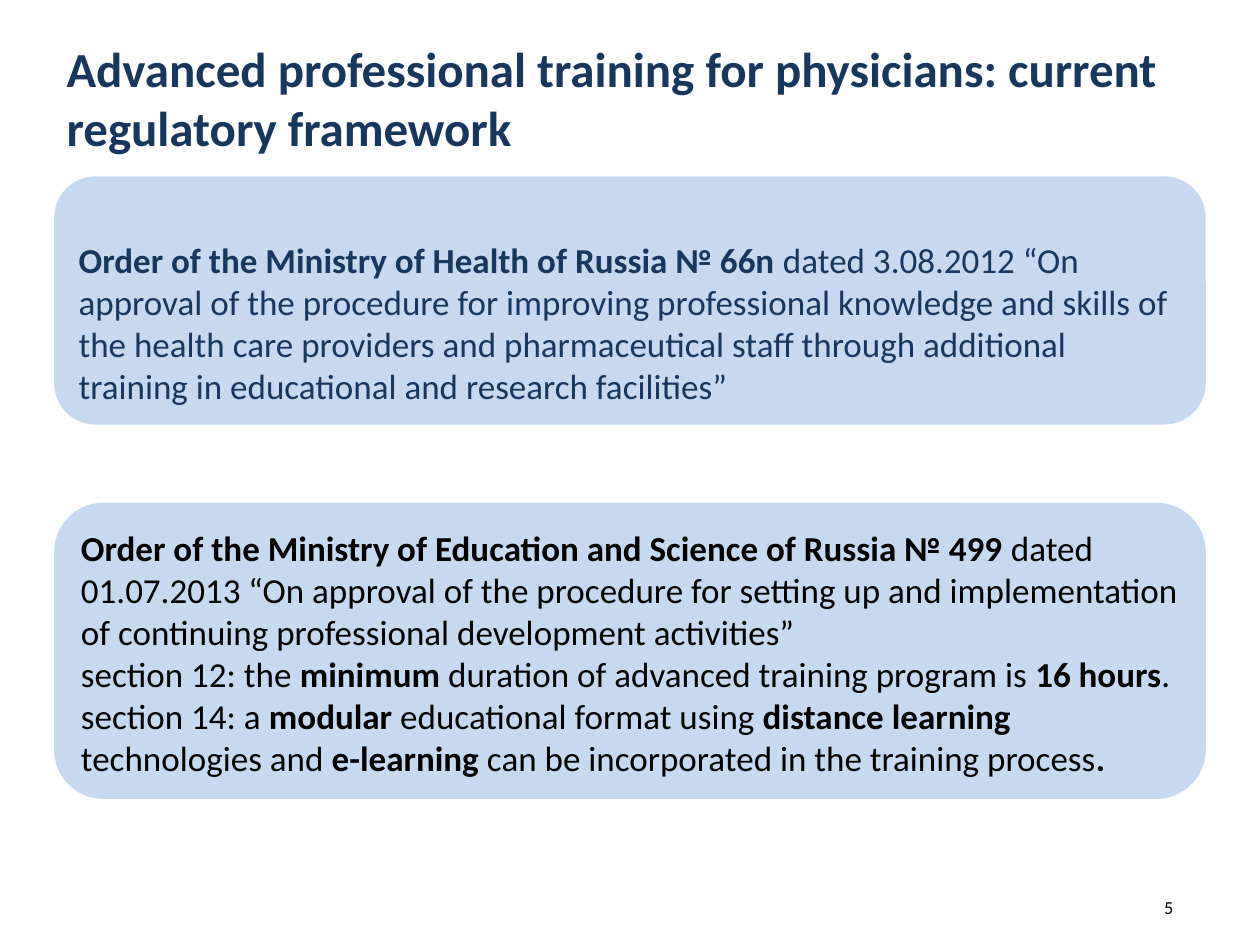
from pptx import Presentation
from pptx.dml.color import RGBColor
from pptx.enum.shapes import MSO_SHAPE as Shape
from pptx.enum.text import MSO_ANCHOR as Anchor, PP_ALIGN as Align
from pptx.util import Inches, Pt

FONT = "Calibri"
NAVY, BLACK, PALE_BLUE = "17375E", "000000", "C6D9F1"
MARGIN, PANEL_WIDTH = 0.43, 9.14

HEALTH_ORDER = [
    "**Order of the Ministry of Health of Russia № 66n **dated 3.08.2012 “On approval "
    "of the procedure for improving professional knowledge and skills of the health care "
    "providers and pharmaceutical staff through additional training in educational and "
    "research facilities”",
]
EDUCATION_ORDER = [
    "**Order of the Ministry of Education and Science of Russia № 499** dated 01.07.2013 "
    "“On approval of the procedure for setting up and implementation of continuing "
    "professional development activities”",
    "section 12: the **minimum** duration of advanced training program is **16 hours**.",
    "section 14: a **modular** educational format using **distance learning** technologies "
    "and **e-learning **can be incorporated in the training process**.**",
]


def rgb(code):
    return RGBColor.from_string(code)


def write(frame, paragraphs, size, color, anchor, align=Align.LEFT):
    """Fill a text frame; words between ** marks are bold."""
    frame.word_wrap = True
    frame.vertical_anchor = anchor
    for number, words in enumerate(paragraphs):
        paragraph = frame.add_paragraph() if number else frame.paragraphs[0]
        paragraph.alignment = align
        for index, part in enumerate(words.split("**")):
            if not part:
                continue
            run = paragraph.add_run()
            run.text = part
            run.font.name = FONT
            run.font.size = Pt(size)
            run.font.bold = index % 2 == 1
            run.font.color.rgb = rgb(color)


def add_panel(slide, top, height, paragraphs, color):
    panel = slide.shapes.add_shape(
        Shape.ROUNDED_RECTANGLE,
        Inches(MARGIN), Inches(top), Inches(PANEL_WIDTH), Inches(height))
    panel.shadow.inherit = False
    panel.fill.solid()
    panel.fill.fore_color.rgb = rgb(PALE_BLUE)
    panel.line.fill.background()
    write(panel.text_frame, paragraphs, 20, color, Anchor.BOTTOM)


def add_label(slide, left, top, width, height, words, size, color, anchor, align=Align.LEFT):
    label = slide.shapes.add_textbox(
        Inches(left), Inches(top), Inches(width), Inches(height))
    write(label.text_frame, [words], size, color, anchor, align)


def main():
    deck = Presentation()
    deck.slide_width, deck.slide_height = Inches(10), Inches(7.5)
    slide = deck.slides.add_slide(deck.slide_layouts[6])

    add_panel(slide, 1.4, 1.97, HEALTH_ORDER, NAVY)
    add_panel(slide, 3.99, 2.35, EDUCATION_ORDER, BLACK)
    add_label(slide, MARGIN, 0.15, 9.08, 1.25,
              "**Advanced professional training for physicians: current regulatory framework**",
              28, NAVY, Anchor.MIDDLE)
    add_label(slide, 9.04, 7.06, 0.47, 0.31, "5", 10.5, BLACK, Anchor.TOP, Align.CENTER)

    deck.save("out.pptx")


if __name__ == "__main__":
    main()
